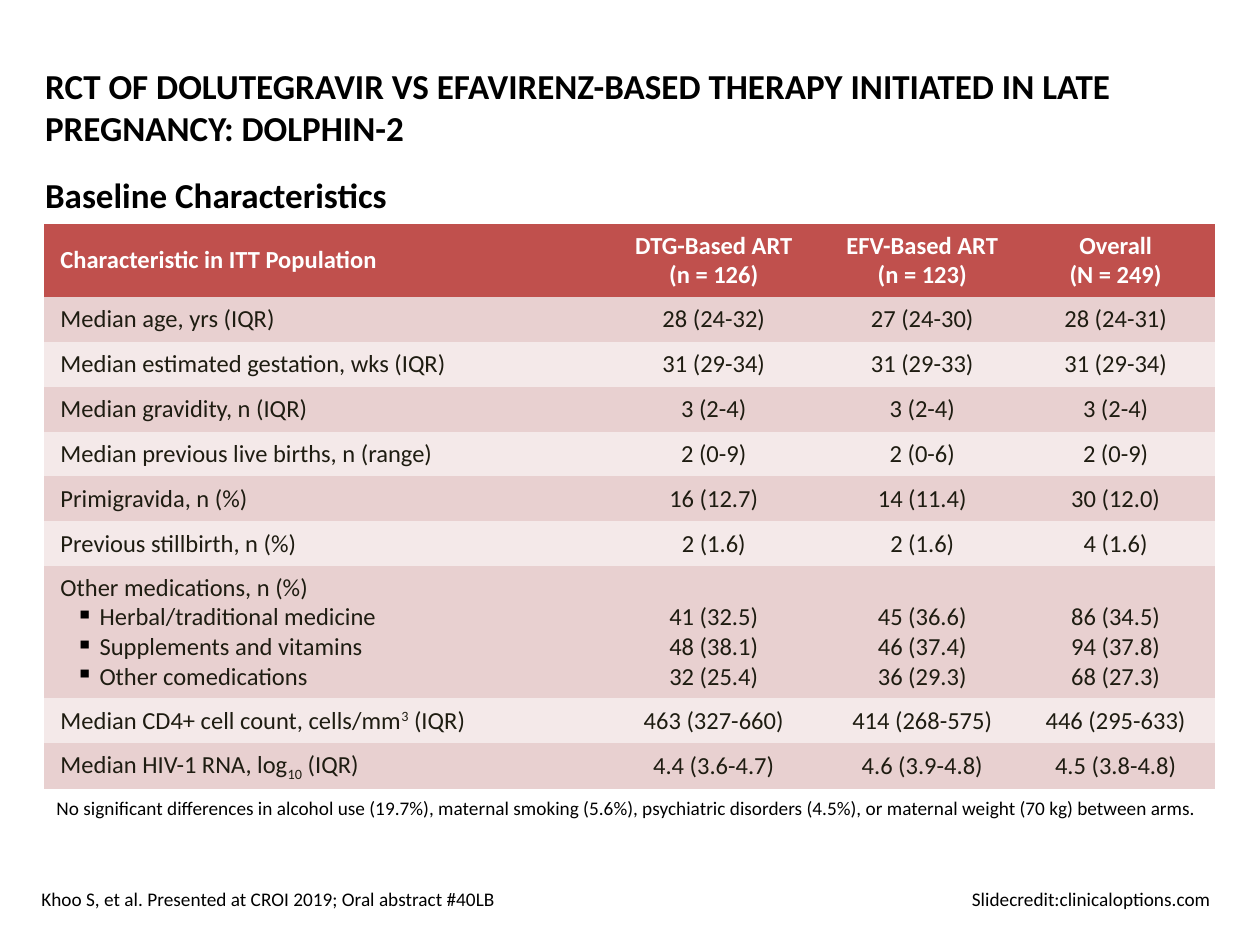
from lxml import etree
from pptx import Presentation
from pptx.dml.color import RGBColor
from pptx.enum.text import MSO_ANCHOR, PP_ALIGN
from pptx.oxml.ns import qn
from pptx.util import Inches, Pt

TOP, MIDDLE, BOTTOM = MSO_ANCHOR.TOP, MSO_ANCHOR.MIDDLE, MSO_ANCHOR.BOTTOM
LEFT, CENTER = PP_ALIGN.LEFT, PP_ALIGN.CENTER

WIDTH, HEIGHT = Inches(10), Inches(7.5)
FONT = "Calibri"
COLORS = {
    "text": "000000",
    "cell_text": "1E1C11",
    "header": "C0504D",
    "header_text": "FFFFFF",
    "odd_row": "E8D0D0",
    "even_row": "F4E9E9",
}
NO_STYLE = "{2D5ABB26-0587-4C30-8999-92F81FD0307C}"

COLUMN_SHARES = [4.41, 1.81, 1.5, 1.57]
HEADER_HEIGHT, GROUP_HEIGHT = Inches(0.58), Inches(1.05)
HEADER = ["Characteristic in ITT Population", "DTG-Based ART\n(n = 126)",
          "EFV-Based ART\n(n = 123)", "Overall\n(N = 249)"]
# Lines after the first in a label are bulleted; a tuple is (text, baseline)
ROWS = [
    ["Median age, yrs (IQR)", "28 (24-32)", "27 (24-30)", "28 (24-31)"],
    ["Median estimated gestation, wks (IQR)", "31 (29-34)", "31 (29-33)", "31 (29-34)"],
    ["Median gravidity, n (IQR)", "3 (2-4)", "3 (2-4)", "3 (2-4)"],
    ["Median previous live births, n (range)", "2 (0-9)", "2 (0-6)", "2 (0-9)"],
    ["Primigravida, n (%)", "16 (12.7)", "14 (11.4)", "30 (12.0)"],
    ["Previous stillbirth, n (%)", "2 (1.6)", "2 (1.6)", "4 (1.6)"],
    ["Other medications, n (%)\nHerbal/traditional medicine\n"
     "Supplements and vitamins\nOther comedications",
     "41 (32.5)\n48 (38.1)\n32 (25.4)",
     "45 (36.6)\n46 (37.4)\n36 (29.3)",
     "86 (34.5)\n94 (37.8)\n68 (27.3)"],
    [["Median CD4+ cell count, cells/mm", ("3", 30), " (IQR)"],
     "463 (327-660)", "414 (268-575)", "446 (295-633)"],
    [["Median HIV-1 RNA, log", ("10", -25), " (IQR)"],
     "4.4 (3.6-4.7)", "4.6 (3.9-4.8)", "4.5 (3.8-4.8)"],
]


def slide_box(left, top, width, height):
    """Turn shares of the slide into lengths."""
    return (round(WIDTH * left), round(HEIGHT * top),
            round(WIDTH * width), round(HEIGHT * height))


def style_paragraph(paragraph, size, color, bold=False, align=LEFT):
    paragraph.alignment = align
    font = paragraph.font
    font.name, font.size, font.bold = FONT, Pt(size), bold
    font.color.rgb = RGBColor.from_string(COLORS[color])


def add_bullet(paragraph):
    properties = paragraph._p.get_or_add_pPr()
    properties.set("marL", str(Inches(0.31)))
    properties.set("indent", str(Inches(-0.19)))
    color = etree.SubElement(properties, qn("a:buClr"))
    etree.SubElement(color, qn("a:srgbClr"), val=COLORS["text"])
    etree.SubElement(properties, qn("a:buChar"), char="▪")


def add_right_tab(paragraph, position):
    tabs = etree.SubElement(paragraph._p.get_or_add_pPr(), qn("a:tabLst"))
    etree.SubElement(tabs, qn("a:tab"), pos=str(position), algn="r")


def add_text(slide, box, text, size, bold=False, anchor=TOP, right_tab=None):
    frame = slide.shapes.add_textbox(*box).text_frame
    frame.word_wrap = True
    frame.vertical_anchor = anchor
    paragraph = frame.paragraphs[0]
    paragraph.text = text
    if right_tab:
        add_right_tab(paragraph, right_tab)
    style_paragraph(paragraph, size, "text", bold)


def fill_cell(cell, content, fill, color, bold, align, anchor=MIDDLE, bulleted=False):
    cell.fill.solid()
    cell.fill.fore_color.rgb = RGBColor.from_string(COLORS[fill])
    cell.margin_left = cell.margin_right = Inches(0.13)
    cell.margin_top = cell.margin_bottom = Inches(0.05)
    cell.vertical_anchor = anchor
    lines = [content] if isinstance(content, list) else [[line] for line in content.split("\n")]
    for index, parts in enumerate(lines):
        frame = cell.text_frame
        paragraph = frame.add_paragraph() if index else frame.paragraphs[0]
        for part in parts:
            text, baseline = part if isinstance(part, tuple) else (part, 0)
            run = paragraph.add_run()
            run.text = text
            if baseline:
                run._r.get_or_add_rPr().set("baseline", str(baseline * 1000))
        if bulleted and index:
            add_bullet(paragraph)
        style_paragraph(paragraph, 14, color, bold, align)


def add_characteristics_table(slide, box):
    left, top, width, height = box
    frame = slide.shapes.add_table(len(ROWS) + 1, len(HEADER), left, top, width, height)
    table = frame.table
    table._tbl.tblPr.find(qn("a:tableStyleId")).text = NO_STYLE
    for column, share in zip(table.columns, COLUMN_SHARES):
        column.width = round(width * share / sum(COLUMN_SHARES))

    # Header
    table.rows[0].height = HEADER_HEIGHT
    for column, content in enumerate(HEADER):
        fill_cell(table.cell(0, column), content, "header", "header_text", True,
                  CENTER if column else LEFT)

    # Banded body; the grouped row is taller, its values sit beside the bullets
    row_height = (height - HEADER_HEIGHT - GROUP_HEIGHT) // (len(ROWS) - 1)
    for row, contents in enumerate(ROWS, start=1):
        grouped = "\n" in contents[0]
        table.rows[row].height = GROUP_HEIGHT if grouped else row_height
        fill = "odd_row" if row % 2 else "even_row"
        for column, content in enumerate(contents):
            fill_cell(table.cell(row, column), content, fill, "cell_text", False,
                      CENTER if column else LEFT,
                      anchor=BOTTOM if grouped else MIDDLE,
                      bulleted=grouped and column == 0)


def add_headings(slide, box):
    left, top, width, height = box
    title_height = round(height * 0.7)
    add_text(slide, (left, top, width, title_height),
             "RCT OF DOLUTEGRAVIR VS EFAVIRENZ-BASED THERAPY INITIATED IN LATE "
             "PREGNANCY: DOLPHIN-2", 20, True, MIDDLE)
    add_text(slide, (left, top + title_height, width, height - title_height),
             "Baseline Characteristics", 20, True)


def add_footer(slide, box):
    add_text(slide, box,
             "Khoo S, et al. Presented at CROI 2019; Oral abstract #40LB\t"
             "Slidecredit:clinicaloptions.com", 11, anchor=MIDDLE,
             right_tab=box[2] - Inches(0.25))


def main():
    presentation = Presentation()
    presentation.slide_width, presentation.slide_height = WIDTH, HEIGHT
    slide = presentation.slides.add_slide(presentation.slide_layouts[6])

    add_headings(slide, slide_box(0.026, 0.048, 0.953, 0.184))
    add_characteristics_table(slide, slide_box(0.035, 0.237, 0.929, 0.597))
    add_text(slide, slide_box(0.035, 0.836, 0.93, 0.039),
             "No significant differences in alcohol use (19.7%), maternal smoking (5.6%), "
             "psychiatric disorders (4.5%), or maternal weight (70 kg) between arms.", 11)
    add_footer(slide, slide_box(0.023, 0.925, 0.953, 0.053))

    presentation.save("out.pptx")


if __name__ == "__main__":
    main()
